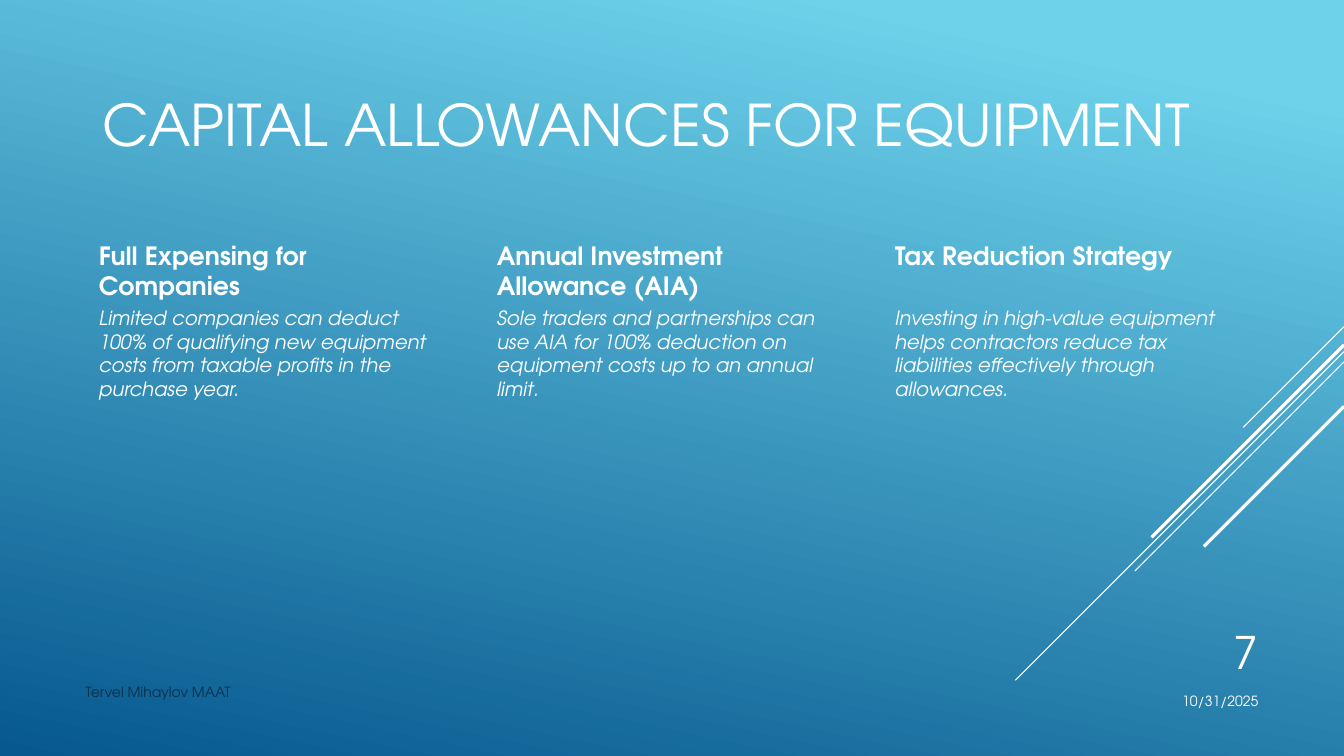
import dataclasses

import lxml.etree
import pptx
import pptx.dml.color
import pptx.enum.shapes
import pptx.enum.text
import pptx.oxml.ns
import pptx.util

Cm = pptx.util.Cm
Pt = pptx.util.Pt
RGB = pptx.dml.color.RGBColor
ANCHOR = pptx.enum.text.MSO_ANCHOR
ALIGN = pptx.enum.text.PP_ALIGN


@dataclasses.dataclass(frozen=True)
class Theme:
    font: str = "TeX Gyre Adventor"
    light: RGB = RGB(0xFF, 0xFF, 0xFF)
    dark: RGB = RGB(0x0A, 0x30, 0x4A)
    sky: RGB = RGB(0x6E, 0xD2, 0xEB)
    sea: RGB = RGB(0x06, 0x58, 0x8E)
    title: float = 41
    number: float = 32
    heading: float = 18
    body: float = 14
    small: float = 10
    thin: float = 0.75
    thick: float = 2.25


THEME = Theme()
WIDTH, HEIGHT = 33.87, 19.05

COLUMNS = [
    ("Full Expensing for Companies",
     "Limited companies can deduct 100% of qualifying new equipment costs "
     "from taxable profits in the purchase year."),
    ("Annual Investment Allowance (AIA)",
     "Sole traders and partnerships can use AIA for 100% deduction on "
     "equipment costs up to an annual limit."),
    ("Tax Reduction Strategy",
     "Investing in high-value equipment helps contractors reduce tax "
     "liabilities effectively through allowances."),
]

RAYS = [
    (8.23, 2.54, THEME.thin),
    (8.86, 8.28, THEME.thin),
    (9.12, 5.27, THEME.thin),
    (8.69, 4.85, THEME.thick),
    (10.24, 3.53, THEME.thick),
]


def add_text(s, box, text, size, color=THEME.light, bold=False, italic=False,
             anchor=ANCHOR.TOP, align=ALIGN.LEFT, insets=(0.25, 0.13, 0.25, 0.13)):
    tf = s.shapes.add_textbox(*map(Cm, box)).text_frame
    tf.word_wrap = True
    tf.vertical_anchor = anchor
    tf.margin_left, tf.margin_top, tf.margin_right, tf.margin_bottom = map(Cm, insets)
    p = tf.paragraphs[0]
    p.text = text
    p.alignment = align
    p.font.name = THEME.font
    p.font.size = Pt(size)
    p.font.bold = bold
    p.font.italic = italic
    p.font.color.rgb = color


def paint_background(s):
    fill = s.background.fill
    fill.gradient()
    fill.gradient_angle = 258
    for stop, color, position in zip(
            fill.gradient_stops, (THEME.sky, THEME.sea), (0.1, 1)):
        stop.color.rgb = color
        stop.position = position


def add_rays(s, right):
    for y, reach, weight in RAYS:
        ray = s.shapes.add_connector(
            pptx.enum.shapes.MSO_CONNECTOR.STRAIGHT,
            Cm(right), Cm(y), Cm(right - reach), Cm(y + reach))
        ray.line.color.rgb = THEME.light
        ray.line.width = Pt(weight)
        lxml.etree.SubElement(
            ray._element.spPr, pptx.oxml.ns.qn("a:effectLst"))


def add_columns(s, left, top, width, height):
    gap = 0.91
    heading_height = 1.7
    column_width = (width - gap * (len(COLUMNS) - 1)) / len(COLUMNS)
    for i, (heading, body) in enumerate(COLUMNS):
        x = left + i * (column_width + gap)
        add_text(s, (x, top, column_width, heading_height), heading,
                 THEME.heading, bold=True, insets=(0.38, 0.08, 0.08, 0.08))
        add_text(s, (x, top + heading_height, column_width, height - heading_height),
                 body, THEME.body, italic=True, insets=(0.38, 0.05, 0.05, 0.05))


def add_footer(s, left, top, width, height):
    right = left + width
    row = 1.02
    bottom = top + height - row
    add_text(s, (left, bottom - 0.23, 20.96, row), "Tervel Mihaylov MAAT",
             THEME.small, color=THEME.dark, anchor=ANCHOR.MIDDLE)
    add_text(s, (right - 4.45, bottom, 4.45, row), "10/31/2025",
             THEME.small, anchor=ANCHOR.MIDDLE, align=ALIGN.RIGHT)
    add_text(s, (right - 3.18, top, 3.18, 1.85), "7",
             THEME.number, anchor=ANCHOR.MIDDLE, align=ALIGN.RIGHT)


def main():
    prs = pptx.Presentation()
    prs.slide_width, prs.slide_height = Cm(WIDTH), Cm(HEIGHT)
    s = prs.slides.add_slide(prs.slide_layouts[6])
    paint_background(s)
    add_rays(s, WIDTH)
    add_text(s, (2.34, 1.02, 29.21, 3.1), "CAPITAL ALLOWANCES FOR EQUIPMENT",
             THEME.title, anchor=ANCHOR.BOTTOM)
    add_columns(s, 2.11, 5.97, 29.18, 11.4)
    add_footer(s, 1.91, 15.49, 30.05, 2.68)
    prs.save("out.pptx")


if __name__ == "__main__":
    main()
